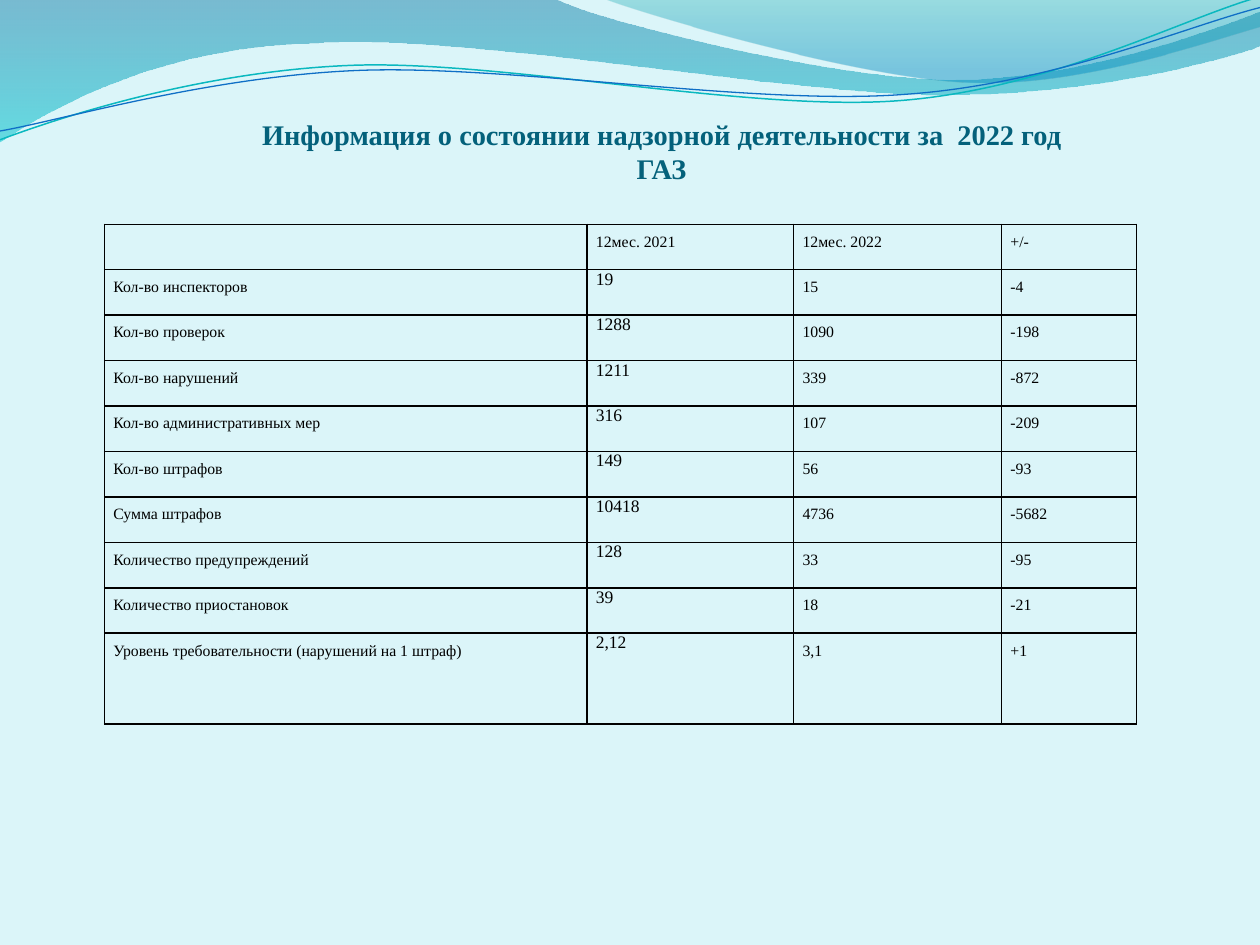
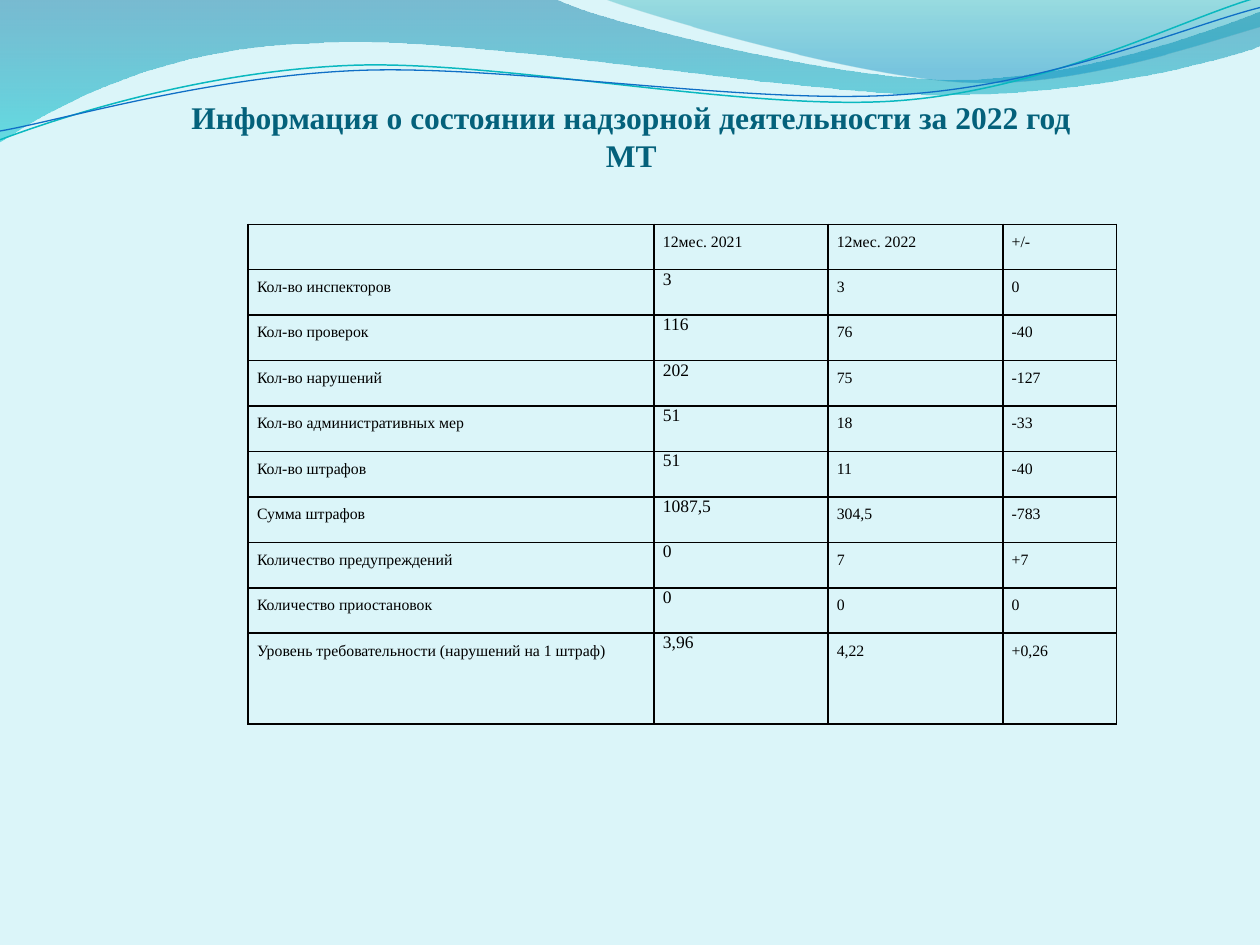
"""Build two slides of supervision results for 2022, each with a comparison table under a wave band."""
from lxml.etree import SubElement
from pptx import Presentation
from pptx.dml.color import RGBColor
from pptx.enum.text import MSO_ANCHOR as Anchor, MSO_AUTO_SIZE as AutoSize, PP_ALIGN as Align
from pptx.oxml.ns import qn
from pptx.util import Inches, Pt

COLORS = {
    "background": "DBF5F9", "title": "04617B", "text": "000000",
    "wave_top": "0074A1", "wave_bottom": "00C6CF",
    "crest_top": "00A1A9", "crest_bottom": "008BBF",
    "teal_line": "0AB8BF", "blue_line": "0F6FC6",
}
FONT = "Times New Roman"
HEADERS = ["", "12мес. 2021", "12мес. 2022", "+/-"]
INDICATORS = [
    "Кол-во инспекторов", "Кол-во проверок", "Кол-во нарушений",
    "Кол-во административных мер", "Кол-во штрафов", "Сумма штрафов",
    "Количество предупреждений", "Количество приостановок",
    "Уровень требовательности (нарушений на 1 штраф)",
]
REPORTS = [
    {
        "title": ["Информация о состоянии надзорной деятельности за  2022 год", "ГАЗ"],
        "title_size": 16.2, "title_box": (0.75, 0.92, 9, 0.55),
        "table_left": 0.83, "table_width": 8.19,
        "values": [
            ("19", "15", "-4"), ("1288", "1090", "-198"), ("1211", "339", "-872"),
            ("316", "107", "-209"), ("149", "56", "-93"), ("10418", "4736", "-5682"),
            ("128", "33", "-95"), ("39", "18", "-21"), ("2,12", "3,1", "+1"),
        ],
    },
    {
        "title": ["Информация о состоянии надзорной деятельности за 2022 год", "МТ"],
        "title_size": 18, "title_box": (0.51, 0.92, 9, 0.46),
        "table_left": 1.97, "table_width": 6.89,
        "values": [
            ("3", "3", "0"), ("116", "76", "-40"), ("202", "75", "-127"),
            ("51", "18", "-33"), ("51", "11", "-40"), ("1087,5", "304,5", "-783"),
            ("0", "7", "+7"), ("0", "0", "0"), ("3,96", "4,22", "+0,26"),
        ],
    },
]
COLUMN_WEIGHTS = [3.83, 1.64, 1.65, 1.07]
ROW_WEIGHTS = [1] * len(INDICATORS) + [2]
TABLE_TOP, TABLE_HEIGHT = 1.78, 3.97

WAVES = [
    {
        "outline": [
            (0, 0), (4.4, -0.01), (4.76, 0.17, 6.64, 0.63, 7.58, 0.63),
            (8.53, 0.63, 9.58, 0.26, 10, 0.09), (10.01, 0.36),
            (9.83, 0.44, 8.7, 0.76, 7.46, 0.75), (6.22, 0.75, 3.82, 0.28, 2.57, 0.34),
            (1.29, 0.36, 0.46, 0.83, -0.01, 1.13), (0, 0),
        ],
        "stops": [(0, "wave_top", 45), (1, "wave_bottom", 55)],
    },
    {
        "outline": [
            (4.79, -0.01), (5.09, 0.11, 6.82, 0.62, 7.69, 0.65),
            (8.56, 0.69, 9.61, 0.32, 10, 0.21), (10, 0), (4.79, -0.01),
        ],
        "stops": [(0, "crest_top", 30), (0.8, "crest_bottom", 45)],
    },
    {
        "outline": [
            (0, 1.11), (0.48, 0.93, 1.58, 0.57, 2.77, 0.52),
            (3.95, 0.47, 5.93, 0.89, 7.13, 0.8), (8.33, 0.71, 9.38, 0.15, 9.98, -0.02),
        ],
        "line": ("teal_line", 0.85),
    },
    {
        "outline": [
            (0, 1.04), (0.47, 0.96, 1.64, 0.61, 2.83, 0.56),
            (4.03, 0.51, 5.97, 0.84, 7.17, 0.75), (8.36, 0.67, 9.41, 0.21, 10, 0.06),
        ],
        "line": ("blue_line", 0.75),
    },
]


def color(name):
    return RGBColor.from_string(COLORS[name])


def bend_segments(shape, outline):
    segments = iter(list(shape.element.iter(qn("a:lnTo"))))
    for step in outline[1:]:
        curve = next(segments)
        if len(step) == 6:
            curve.tag = qn("a:cubicBezTo")
            for segment in (next(segments), next(segments)):
                curve.append(segment[0])
                segment.getparent().remove(segment)


def draw_wave(slide, wave):
    points = [
        (Inches(x), Inches(y))
        for step in wave["outline"] for x, y in zip(step[::2], step[1::2])
    ]
    builder = slide.shapes.build_freeform(*points[0], scale=1.0)
    builder.add_line_segments(points[1:], close="stops" in wave)
    shape = builder.convert_to_shape()
    bend_segments(shape, wave["outline"])
    shape.shadow.inherit = False
    if "line" in wave:
        name, width = wave["line"]
        shape.fill.background()
        shape.line.color.rgb = color(name)
        shape.line.width = Pt(width)
        return shape
    shape.line.fill.background()
    shape.fill.gradient()
    shape.fill.gradient_angle = 270
    for stop, (position, name, _) in zip(shape.fill.gradient_stops, wave["stops"]):
        stop.position = position
        stop.color.rgb = color(name)
    for element, (_, _, opacity) in zip(shape.element.iter(qn("a:srgbClr")), wave["stops"]):
        SubElement(element, qn("a:alpha"), val=str(opacity * 1000))
    return shape


def add_run(paragraph, text, size, name, bold=False):
    run = paragraph.add_run()
    run.text = text
    run.font.name, run.font.size, run.font.bold = FONT, Pt(size), bold
    run.font.color.rgb = color(name)


def set_title(slide, report):
    title = slide.shapes.title
    title.left, title.top, title.width, title.height = map(Inches, report["title_box"])
    frame = title.text_frame
    frame.auto_size, frame.word_wrap = AutoSize.NONE, True
    frame.vertical_anchor = Anchor.BOTTOM
    frame.margin_left = frame.margin_right = frame.margin_bottom = 0
    frame.margin_top = Inches(0.05)
    paragraph = frame.paragraphs[0]
    paragraph.alignment = Align.CENTER
    for index, line in enumerate(report["title"]):
        if index:
            paragraph.add_line_break()
        add_run(paragraph, line, report["title_size"], "title", bold=True)


def format_cell(cell, text, is_previous_year):
    cell.margin_left = cell.margin_right = Inches(0.07)
    cell.margin_top = cell.margin_bottom = 0
    properties = cell._tc.get_or_add_tcPr()
    for side in ("a:lnL", "a:lnR", "a:lnT", "a:lnB"):
        border = SubElement(properties, qn(side), w=str(Pt(1)))
        fill = SubElement(border, qn("a:solidFill"))
        SubElement(fill, qn("a:srgbClr"), val=COLORS["text"])
    cell.fill.background()
    if not text:
        return
    paragraph = cell.text_frame.paragraphs[0]
    if not is_previous_year:
        paragraph.alignment, paragraph.line_spacing = Align.JUSTIFY, 1.5
    add_run(paragraph, text, 10 if is_previous_year else 9, "text")


def add_report_table(slide, report):
    rows = [HEADERS] + [[name, *values] for name, values in zip(INDICATORS, report["values"])]
    box = (report["table_left"], TABLE_TOP, report["table_width"], TABLE_HEIGHT)
    table = slide.shapes.add_table(len(rows), len(HEADERS), *map(Inches, box)).table
    table.first_row = table.horz_banding = False
    for column, weight in zip(table.columns, COLUMN_WEIGHTS):
        column.width = Inches(report["table_width"] * weight / sum(COLUMN_WEIGHTS))
    for row_index, (row, weight) in enumerate(zip(rows, ROW_WEIGHTS)):
        table.rows[row_index].height = Inches(TABLE_HEIGHT * weight / sum(ROW_WEIGHTS))
        for column_index, text in enumerate(row):
            is_previous_year = row_index > 0 and column_index == 1
            format_cell(table.cell(row_index, column_index), text, is_previous_year)


def main():
    presentation = Presentation()
    presentation.slide_width, presentation.slide_height = Inches(10), Inches(7.5)
    master, layout = presentation.slide_master, presentation.slide_layouts[5]
    master.background.fill.solid()
    master.background.fill.fore_color.rgb = color("background")
    slides = [presentation.slides.add_slide(layout) for _ in REPORTS]
    for wave in WAVES:
        master.shapes.element.append(draw_wave(slides[0], wave).element)
    for slide, report in zip(slides, REPORTS):
        set_title(slide, report)
        add_report_table(slide, report)
    presentation.save("out.pptx")


if __name__ == "__main__":
    main()
